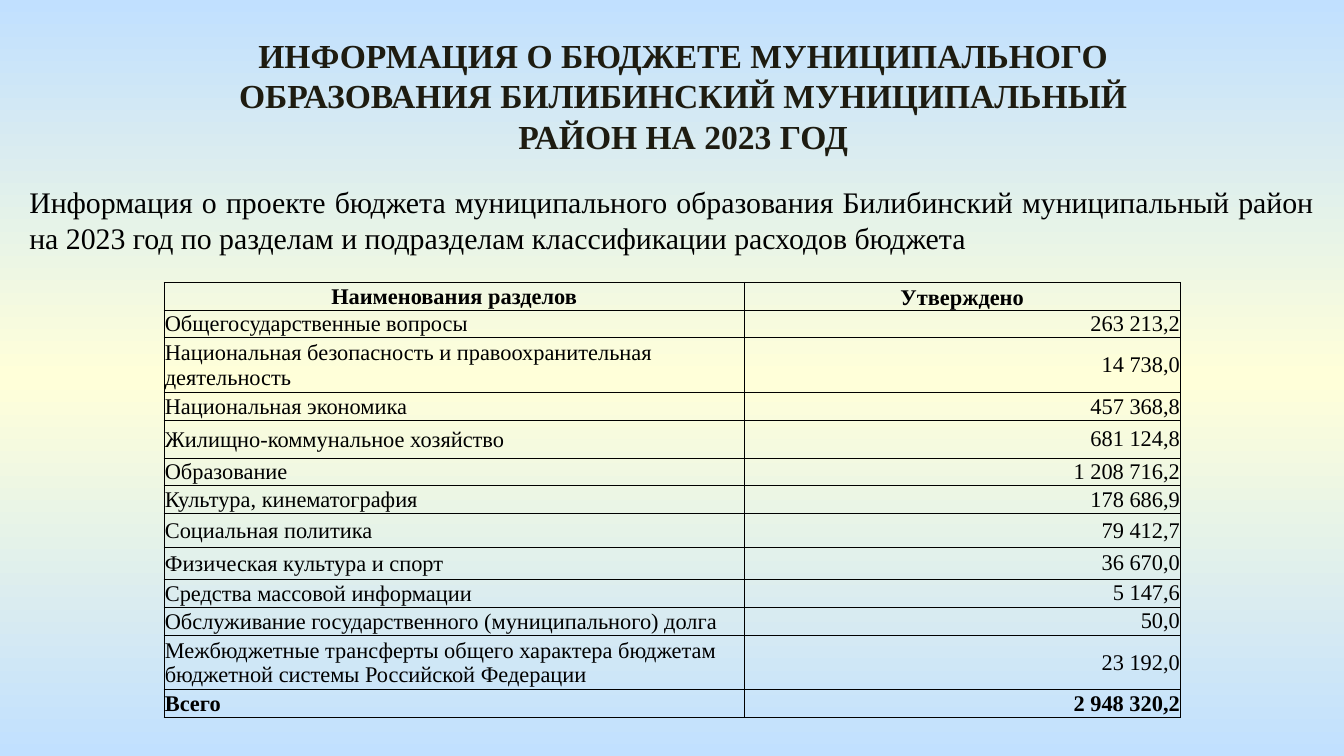
from copy import deepcopy
from dataclasses import dataclass

from lxml.etree import SubElement
from pptx import Presentation
from pptx.dml.color import RGBColor
from pptx.enum.text import MSO_ANCHOR, PP_ALIGN
from pptx.oxml.ns import qn
from pptx.slide import Slide
from pptx.table import _Cell
from pptx.util import Inches, Pt

FONT = "Times New Roman"
SKY = RGBColor(0xC1, 0xE0, 0xFF)
CREAM = RGBColor(0xFF, 0xFF, 0xD9)
DARK = RGBColor(0x1E, 0x1C, 0x11)
BLACK = RGBColor(0, 0, 0)


@dataclass
class Label:
    text: str
    left: float
    top: float
    width: float
    height: float
    size: int
    color: RGBColor
    align: PP_ALIGN
    bold: bool = False


@dataclass
class Section:
    name: str
    amount: str
    height: float = 0.19
    bold: bool = False


LABELS = [
    Label("ИНФОРМАЦИЯ О БЮДЖЕТЕ МУНИЦИПАЛЬНОГО ОБРАЗОВАНИЯ БИЛИБИНСКИЙ "
          "МУНИЦИПАЛЬНЫЙ РАЙОН НА 2023 ГОД",
          1.22, 0.21, 7.73, 1.01, 18, DARK, PP_ALIGN.CENTER, True),
    Label("Информация о проекте бюджета муниципального образования Билибинский "
          "муниципальный район на 2023 год по разделам и подразделам "
          "классификации расходов бюджета",
          0.12, 1.32, 9.76, 0.64, 16, BLACK, PP_ALIGN.JUSTIFY),
]

SECTIONS = [
    Section("Наименования разделов", "Утверждено", bold=True),
    Section("Общегосударственные вопросы", "263 213,2"),
    Section("Национальная безопасность и правоохранительная деятельность",
            "14 738,0", 0.4),
    Section("Национальная экономика", "457 368,8"),
    Section("Жилищно-коммунальное хозяйство", "681 124,8", 0.28),
    Section("Образование", "1 208 716,2"),
    Section("Культура, кинематография", "178 686,9"),
    Section("Социальная политика", "79 412,7", 0.25),
    Section("Физическая культура и спорт", "36 670,0", 0.24),
    Section("Средства массовой информации", "5 147,6"),
    Section("Обслуживание государственного (муниципального) долга", "50,0"),
    Section("Межбюджетные трансферты общего характера бюджетам бюджетной "
            "системы Российской Федерации", "23 192,0", 0.4),
    Section("Всего", "2 948 320,2", bold=True),
]


def style_paragraph(p, size: int, color: RGBColor, align: PP_ALIGN, bold: bool) -> None:
    p.alignment = align
    p.font.name = FONT
    p.font.size = Pt(size)
    p.font.color.rgb = color
    p.font.bold = bold


def paint_background(s: Slide) -> None:
    fill = s.background.fill
    fill.gradient()
    fill.gradient_angle = 270
    stops = s.element.find(".//" + qn("a:gsLst"))
    stops.append(deepcopy(stops[-1]))
    for stop, position, color in zip(fill.gradient_stops, (0, 0.5, 1), (SKY, CREAM, SKY)):
        stop.position = position
        stop.color.rgb = color


def add_label(s: Slide, label: Label) -> None:
    box = s.shapes.add_textbox(Inches(label.left), Inches(label.top),
                               Inches(label.width), Inches(label.height))
    tf = box.text_frame
    tf.word_wrap = True
    tf.text = label.text
    style_paragraph(tf.paragraphs[0], label.size, label.color, label.align, label.bold)


def add_borders(cell: _Cell) -> None:
    tc_pr = cell._tc.get_or_add_tcPr()
    for side in ("a:lnL", "a:lnR", "a:lnT", "a:lnB"):
        line = SubElement(tc_pr, qn(side), w=str(Pt(0.5)))
        solid = SubElement(line, qn("a:solidFill"))
        SubElement(solid, qn("a:srgbClr"), val=str(BLACK))


def fill_cell(cell: _Cell, text: str, align: PP_ALIGN, bold: bool,
              inset: float, anchor: MSO_ANCHOR) -> None:
    add_borders(cell)
    cell.fill.background()
    cell.margin_left = cell.margin_right = cell.margin_top = Pt(inset)
    cell.margin_bottom = 0
    cell.vertical_anchor = anchor
    cell.text = text
    style_paragraph(cell.text_frame.paragraphs[0], 12, BLACK, align, bold)


def add_budget_table(s: Slide, sections: list[Section]) -> None:
    height = sum(section.height for section in sections)
    table = s.shapes.add_table(len(sections), 2, Inches(1.22), Inches(2.1),
                               Inches(7.56), Inches(height)).table
    table.horz_banding = False
    table.columns[0].width = Inches(4.32)
    table.columns[1].width = Inches(3.24)
    for i, section in enumerate(sections):
        header = i == 0
        table.rows[i].height = Inches(section.height)
        fill_cell(table.cell(i, 0), section.name,
                  PP_ALIGN.CENTER if header else PP_ALIGN.LEFT,
                  section.bold, 0.5, MSO_ANCHOR.MIDDLE)
        fill_cell(table.cell(i, 1), section.amount,
                  PP_ALIGN.CENTER if header else PP_ALIGN.RIGHT,
                  section.bold, 0.5 if header else 0,
                  MSO_ANCHOR.BOTTOM if header else MSO_ANCHOR.MIDDLE)


def main() -> None:
    """Build the 2023 municipal budget slide."""
    prs = Presentation()
    prs.slide_width = Inches(10)
    prs.slide_height = Inches(10 * 9 / 16)
    s = prs.slides.add_slide(prs.slide_layouts[6])
    paint_background(s)
    for label in LABELS:
        add_label(s, label)
    add_budget_table(s, SECTIONS)
    prs.save("out.pptx")


if __name__ == "__main__":
    main()
